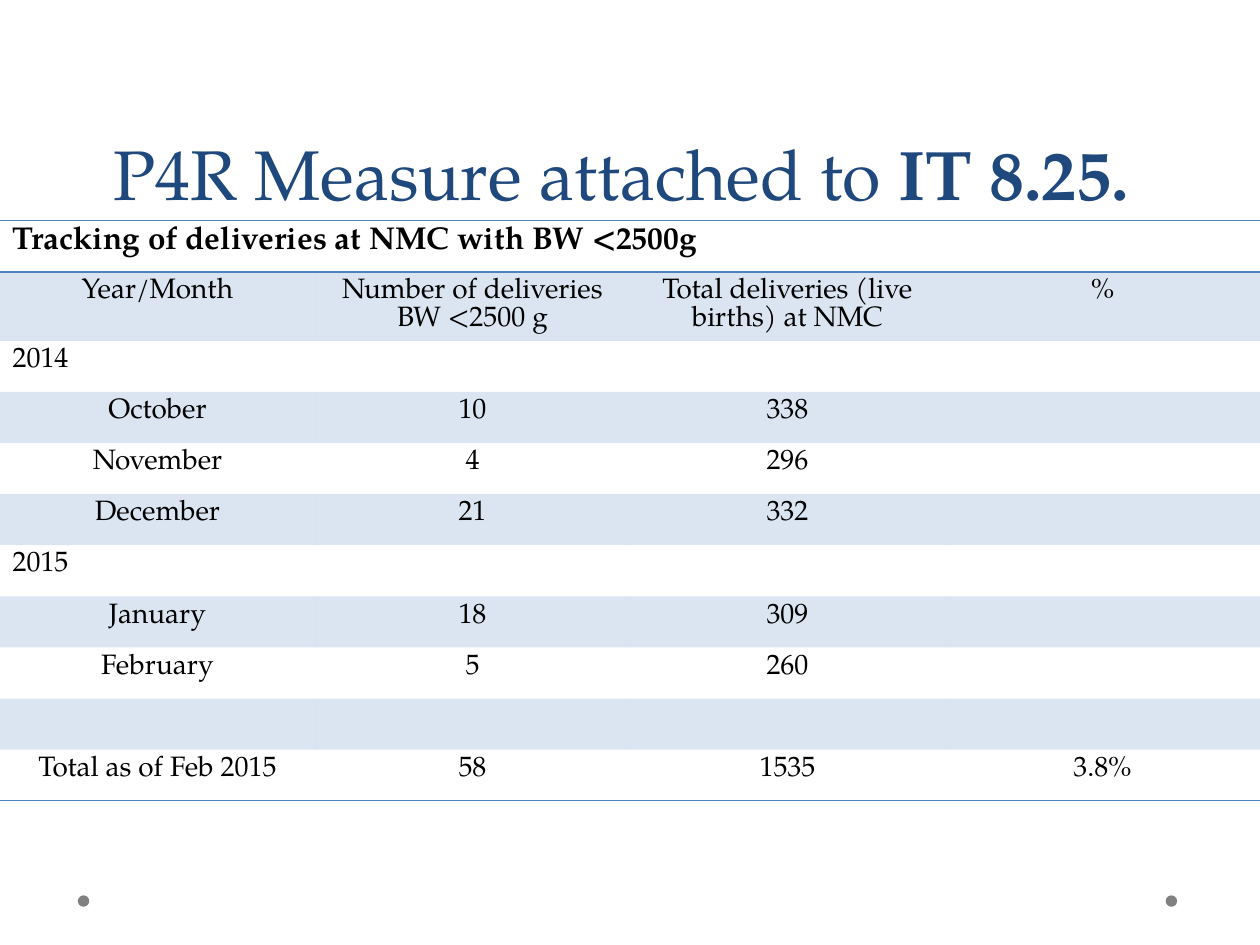
from lxml.etree import SubElement
from pptx import Presentation
from pptx.dml.color import RGBColor
from pptx.enum.shapes import MSO_SHAPE
from pptx.enum.text import MSO_ANCHOR, MSO_AUTO_SIZE, PP_ALIGN
from pptx.oxml.ns import qn
from pptx.util import Cm, Pt

COLORS = {"title": "1F497D", "text": "000000", "accent": "4F81BD", "dot": "808080"}
FONT = "TeX Gyre Pagella"
FORMATS = {
    "title": {"name": FONT, "size": Pt(40), "bold": False},
    "title_bold": {"name": FONT, "size": Pt(40), "bold": True},
    "heading": {"name": FONT, "size": Pt(18), "bold": True},
    "body": {"name": FONT, "size": Pt(16), "bold": False},
}
PLAIN_TABLE_STYLE = "{2D5ABB26-0587-4C30-8999-92F81FD0307C}"
ROWS = [
    ["Tracking of deliveries at NMC with BW <2500g", "", "", ""],
    ["Year/Month", "Number of deliveries BW <2500 g",
     "Total deliveries (live births) at NMC", "%"],
    ["2014", "", "", ""],
    ["October", "10", "338", ""],
    ["November", "4", "296", ""],
    ["December", "21", "332", ""],
    ["2015", "", "", ""],
    ["January", "18", "309", ""],
    ["February", "5", "260", ""],
    ["", "", "", ""],
    ["Total as of Feb 2015", "58", "1535", "3.8%"],
]
LEFT_ALIGNED_ROWS = (0, 2, 6)


def add_run(paragraph, text, format_name, color):
    run = paragraph.add_run()
    run.text = text
    for attribute, value in FORMATS[format_name].items():
        setattr(run.font, attribute, value)
    run.font.color.rgb = RGBColor.from_string(COLORS[color])


def add_title(slide):
    title = slide.shapes.title
    bounds = {"left": Cm(1.27), "top": Cm(0), "width": Cm(22.86), "height": Cm(4.45)}
    for attribute, value in bounds.items():
        setattr(title, attribute, value)
    frame = title.text_frame
    settings = {"word_wrap": True, "vertical_anchor": MSO_ANCHOR.BOTTOM,
                "auto_size": MSO_AUTO_SIZE.NONE}
    for attribute, value in settings.items():
        setattr(frame, attribute, value)
    paragraph = frame.paragraphs[0]
    paragraph.alignment = PP_ALIGN.CENTER
    paragraph.line_spacing = Pt(58)
    add_run(paragraph, "P4R Measure attached to ", "title", "title")
    add_run(paragraph, "IT 8.25. ", "title_bold", "title")


def add_dot(slide, left):
    dot = slide.shapes.add_shape(MSO_SHAPE.OVAL, left, Cm(18.05), Cm(0.23), Cm(0.23))
    dot.shadow.inherit = False
    dot.fill.solid()
    dot.fill.fore_color.rgb = RGBColor.from_string(COLORS["dot"])
    dot.line.fill.background()


def add_borders(cell, edges):
    properties = cell._tc.get_or_add_tcPr()
    for position, edge in enumerate(edges):
        line = SubElement(properties, qn(f"a:{edge}"), w=str(Pt(1)))
        fill = SubElement(line, qn("a:solidFill"))
        SubElement(fill, qn("a:srgbClr"), val=COLORS["accent"])
        properties.insert(position, line)


def fill_cell(cell, banded):
    if not banded:
        cell.fill.background()
        return
    cell.fill.solid()
    cell.fill.fore_color.rgb = RGBColor.from_string(COLORS["accent"])
    color = cell._tc.tcPr.find(f".//{qn('a:srgbClr')}")
    SubElement(color, qn("a:alpha"), val="20000")


def add_table(slide):
    row_height = Cm(1.03)
    frame = slide.shapes.add_table(len(ROWS), len(ROWS[0]), Cm(0), Cm(4.45),
                                   Cm(25.4), row_height * len(ROWS))
    table = frame.table
    table.first_row = False
    table.horz_banding = False
    table._tbl.tblPr.find(qn("a:tableStyleId")).text = PLAIN_TABLE_STYLE
    borders = {0: ("lnT", "lnB"), len(ROWS) - 1: ("lnB",)}
    for row_index, values in enumerate(ROWS):
        table.rows[row_index].height = row_height
        for column_index, text in enumerate(values):
            cell = table.cell(row_index, column_index)
            fill_cell(cell, row_index % 2 == 1)
            add_borders(cell, borders.get(row_index, ()))
            if text:
                paragraph = cell.text_frame.paragraphs[0]
                left_aligned = row_index in LEFT_ALIGNED_ROWS
                paragraph.alignment = PP_ALIGN.LEFT if left_aligned else PP_ALIGN.CENTER
                add_run(paragraph, text, "body" if row_index else "heading", "text")
    table.cell(0, 0).merge(table.cell(0, len(ROWS[0]) - 1))


def main():
    presentation = Presentation()
    presentation.slide_width = Cm(25.4)
    presentation.slide_height = Cm(19.05)
    slide = presentation.slides.add_slide(presentation.slide_layouts[5])
    for left in (Cm(23.5), Cm(1.57)):
        add_dot(slide, left)
    add_title(slide)
    add_table(slide)
    presentation.save("out.pptx")


if __name__ == "__main__":
    main()
